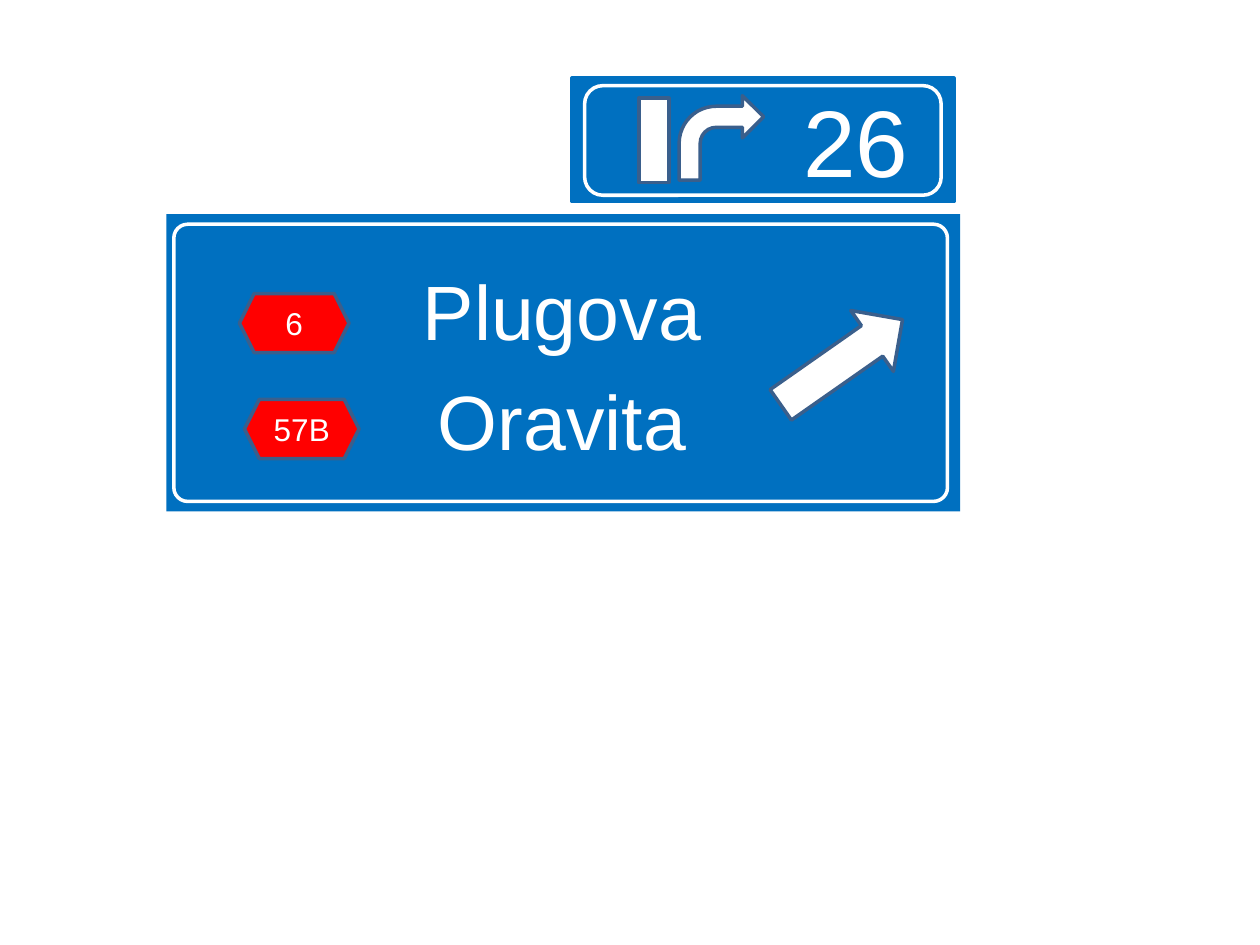
from dataclasses import dataclass

from pptx import Presentation
from pptx import util as u
from pptx.dml.color import RGBColor
from pptx.enum import shapes, text

BLUE, RED, WHITE, OUTLINE = "0070C0", "FF0000", "FFFFFF", "3A5F8C"
KIND = shapes.MSO_SHAPE


@dataclass(frozen=True)
class Part:
    kind: int
    left: float
    top: float
    width: float
    height: float
    fill: str | None = None
    line: str | None = None
    adjustments: tuple[float, ...] = ()
    rotation: float = 0


@dataclass(frozen=True)
class Label:
    lines: tuple[str, ...]
    size: float
    insets: tuple[float, float, float, float] = (0.1, 0.05, 0.1, 0.05)
    anchor: int = text.MSO_ANCHOR.MIDDLE
    space_before: tuple[float, ...] = (0,)


def color(hex_value: str) -> RGBColor:
    return RGBColor.from_string(hex_value)


def draw_part(page, part: Part):
    shape = page.shapes.add_shape(
        part.kind, *map(u.Inches, (part.left, part.top, part.width, part.height))
    )
    shape.shadow.inherit = False
    shape.rotation = part.rotation
    for index, value in enumerate(part.adjustments):
        shape.adjustments[index] = value
    if part.fill:
        shape.fill.solid()
        shape.fill.fore_color.rgb = color(part.fill)
    else:
        shape.fill.background()
    if part.line:
        shape.line.color.rgb = color(part.line)
        shape.line.width = u.Pt(2)
    else:
        shape.line.fill.background()
    return shape


def write_label(shape, label: Label) -> None:
    box = shape.text_frame
    box.word_wrap = True
    box.vertical_anchor = label.anchor
    box.margin_left, box.margin_top, box.margin_right, box.margin_bottom = map(
        u.Inches, label.insets
    )
    for index, (line, space) in enumerate(zip(label.lines, label.space_before)):
        para = box.paragraphs[0] if index == 0 else box.add_paragraph()
        para.alignment = text.PP_ALIGN.CENTER
        para.space_before = u.Pt(space)
        span = para.add_run()
        span.text = line
        span.font.name = "Arial"
        span.font.size = u.Pt(label.size)
        span.font.color.rgb = color(WHITE)


def draw_road_badge(page, left: float, top: float, width: float, number: str) -> None:
    badge = draw_part(page, Part(KIND.HEXAGON, left, top, width, 0.47, RED, OUTLINE))
    write_label(badge, Label((number,), 18))


def draw_destination_sign(page) -> None:
    panel = draw_part(page, Part(KIND.RECTANGLE, 1.32, 1.7, 6.3, 2.36, BLUE))
    write_label(
        panel,
        Label(
            ("Plugova", "Oravita"),
            44,
            insets=(0.08, 0.39, 0.1, 0.24),
            anchor=text.MSO_ANCHOR.TOP,
            space_before=(5, 10),
        ),
    )
    draw_part(
        page,
        Part(KIND.RIGHT_ARROW, 6.09, 2.58, 1.18, 0.59, WHITE, OUTLINE, rotation=325),
    )
    draw_part(
        page,
        Part(KIND.ROUNDED_RECTANGLE, 1.38, 1.78, 6.14, 2.2, line=WHITE, adjustments=(0.05,)),
    )
    draw_road_badge(page, 1.9, 2.33, 0.87, "6")
    draw_road_badge(page, 1.94, 3.17, 0.91, "57B")


def draw_exit_sign(page) -> None:
    panel = draw_part(
        page,
        Part(KIND.ROUNDED_RECTANGLE, 4.54, 0.62, 3.03, 0.98, BLUE, BLUE, (0,)),
    )
    write_label(panel, Label(("26",), 54, insets=(1.57, 0.05, 0.1, 0.05)))
    draw_part(page, Part(KIND.RECTANGLE, 5.07, 0.78, 0.24, 0.67, WHITE, OUTLINE))
    draw_part(
        page,
        Part(KIND.BENT_ARROW, 5.39, 0.76, 0.67, 0.67, WHITE, OUTLINE, (0.25, 0.25, 0.25, 0.44)),
    )
    draw_part(page, Part(KIND.ROUNDED_RECTANGLE, 4.64, 0.68, 2.83, 0.87, line=WHITE))


def main() -> None:
    deck = Presentation()
    deck.slide_width, deck.slide_height = u.Inches(10), u.Inches(7.5)
    page = deck.slides.add_slide(deck.slide_layouts[6])
    draw_destination_sign(page)
    draw_exit_sign(page)
    deck.save("out.pptx")


if __name__ == "__main__":
    main()
